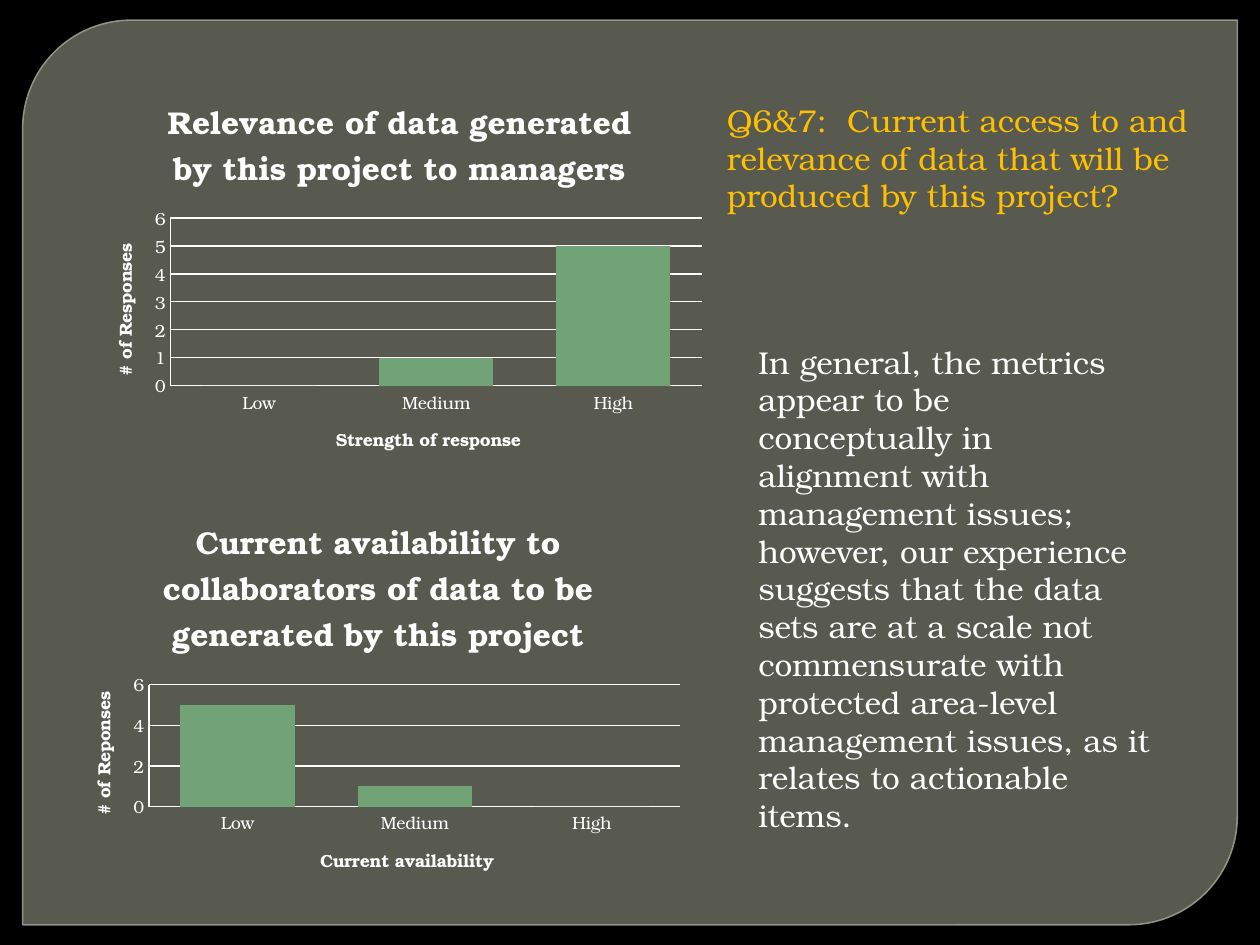
from lxml import etree
from pptx import Presentation
from pptx.chart.data import CategoryChartData
from pptx.dml.color import RGBColor
from pptx.enum.chart import XL_CHART_TYPE, XL_TICK_MARK
from pptx.enum.shapes import MSO_SHAPE
from pptx.enum.text import MSO_AUTO_SIZE
from pptx.oxml.ns import qn
from pptx.util import Inches, Pt

WHITE = "FFFFFF"
GOLD = "FFC000"
GREEN = "72A376"
LEVELS = ["Low", "Medium", "High"]


def colour(value):
    return RGBColor.from_string(value)


def set_opacity(fill_parent, percent):
    tone = fill_parent.find(qn("a:solidFill"))[0]
    etree.SubElement(tone, qn("a:alpha"), val=str(percent * 1000))


class PageBuilder:
    font_name = "TeX Gyre Bonum"

    def __init__(self, page):
        self.page = page

    def background(self, value):
        fill = self.page.background.fill
        fill.solid()
        fill.fore_color.rgb = colour(value)

    def panel(self, left, top, width, height):
        shape = self.page.shapes.add_shape(
            MSO_SHAPE.ROUND_2_DIAG_RECTANGLE,
            Inches(left), Inches(top), Inches(width), Inches(height))
        shape.shadow.inherit = False
        shape.adjustments[0] = 0.12
        shape.adjustments[1] = 0
        shape.fill.solid()
        shape.fill.fore_color.rgb = colour("888B7B")
        shape.line.color.rgb = colour("9DA090")
        shape.line.width = Pt(0.87)
        properties = shape.fill._xPr
        set_opacity(properties, 65)
        set_opacity(properties.find(qn("a:ln")), 88)

    def style(self, font, size, value=WHITE, bold=False):
        font.name = self.font_name
        font.size = Pt(size)
        font.bold = bold
        font.color.rgb = colour(value)

    def text(self, left, top, width, height, wording, value):
        box = self.page.shapes.add_textbox(
            Inches(left), Inches(top), Inches(width), Inches(height))
        frame = box.text_frame
        frame.word_wrap = True
        frame.auto_size = MSO_AUTO_SIZE.SHAPE_TO_FIT_TEXT
        span = frame.paragraphs[0].add_run()
        span.text = wording
        self.style(span.font, 18, value)

    def chart_title(self, owner, wording, size):
        owner.has_title = True
        title = owner.chart_title if hasattr(owner, "chart_title") else owner.axis_title
        para = title.text_frame.paragraphs[0]
        self.style(para.font, size, bold=True)
        span = para.add_run()
        span.text = wording
        self.style(span.font, size, bold=True)

    def column_chart(self, left, top, title, category_title, value_title, values):
        data = CategoryChartData()
        data.categories = LEVELS
        data.add_series("Series 1", values)
        chart = self.page.shapes.add_chart(
            XL_CHART_TYPE.COLUMN_STACKED,
            Inches(left), Inches(top), Inches(5), Inches(3.21), data).chart
        self.style(chart.font, 10)
        chart.has_legend = False
        self.chart_title(chart, title, 18)
        chart.chart_title.include_in_layout = False
        plot = chart.plots[0]
        plot.gap_width = 55
        plot.overlap = 100
        plot.vary_by_categories = False
        fill = plot.series[0].format.fill
        fill.solid()
        fill.fore_color.rgb = colour(GREEN)
        for axis, wording in ((chart.category_axis, category_title),
                              (chart.value_axis, value_title)):
            self.chart_title(axis, wording, 10)
            axis.major_tick_mark = XL_TICK_MARK.NONE
            axis.minor_tick_mark = XL_TICK_MARK.NONE
            axis.format.line.color.rgb = colour(WHITE)
            axis.format.line.width = Pt(0.75)
        chart.value_axis.has_major_gridlines = True
        grid = chart.value_axis.major_gridlines.format.line
        grid.color.rgb = colour(WHITE)
        grid.width = Pt(0.75)


def main():
    deck = Presentation()
    deck.slide_width = Inches(10)
    deck.slide_height = Inches(7.5)
    builder = PageBuilder(deck.slides.add_slide(deck.slide_layouts[6]))
    builder.background("000000")
    builder.panel(0.18, 0.16, 9.64, 7.18)
    builder.column_chart(
        0.67, 0.58, "Relevance of data generated by this project to managers",
        "Strength of response", "# of Responses", [0, 1, 5])
    builder.column_chart(
        0.5, 3.92,
        "Current availability to collaborators of data to be generated by this project",
        "Current availability", "# of Reponses", [5, 1, 0])
    builder.text(
        5.67, 0.75, 3.92, 1.01,
        "Q6&7:\u00a0 Current access to and relevance of data that will be "
        "produced by this project?".replace("\u00a0", " "), GOLD)
    builder.text(
        5.92, 2.67, 3.33, 3.43,
        "In general, the metrics appear to be conceptually in alignment with "
        "management issues; however, our experience suggests that the data sets "
        "are at a scale not commensurate with protected area-level management "
        "issues, as it relates to actionable items.", WHITE)
    deck.save("out.pptx")


if __name__ == "__main__":
    main()
